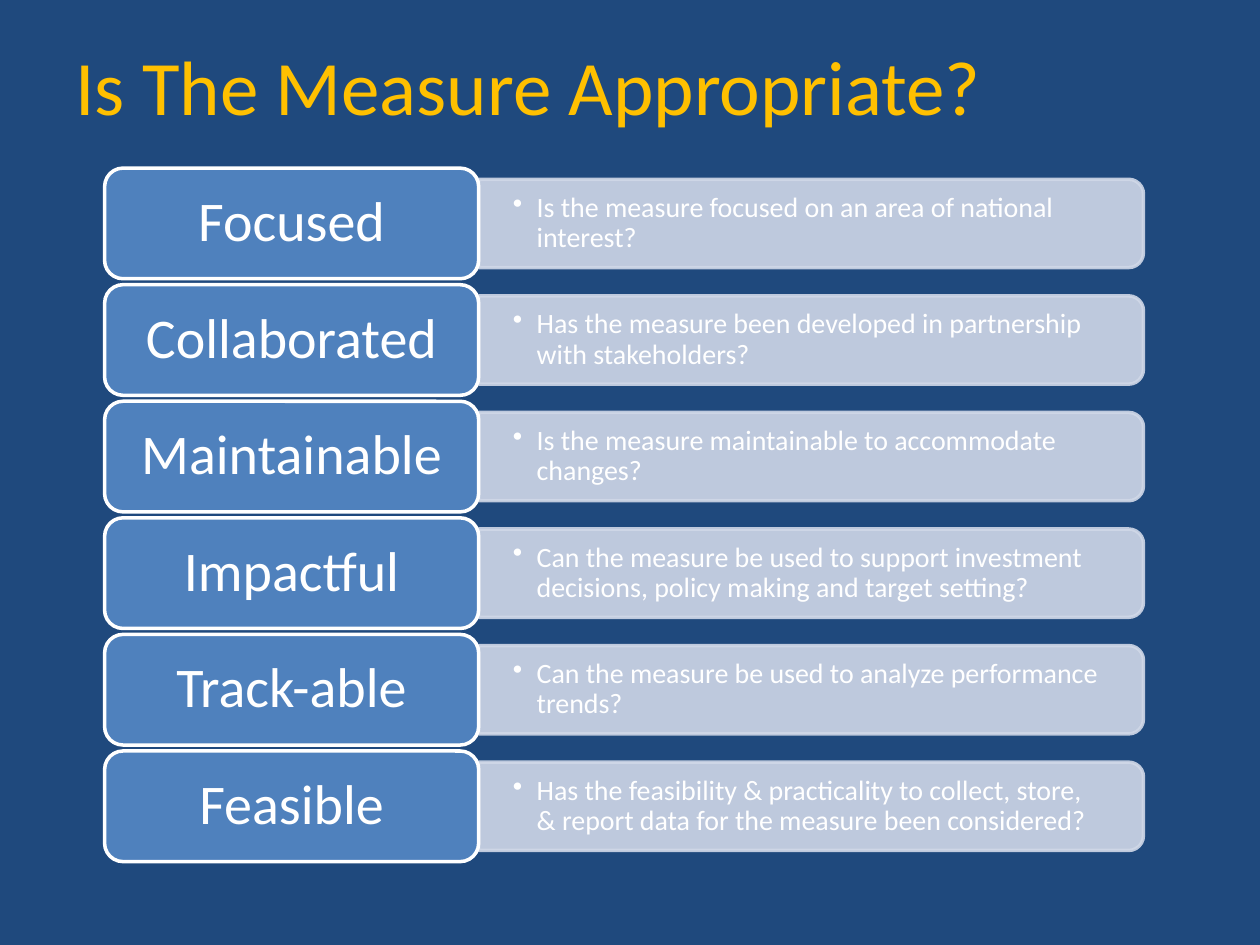
from lxml import etree
from pptx import Presentation
from pptx.dml.color import RGBColor
from pptx.enum.shapes import MSO_SHAPE
from pptx.enum.text import MSO_ANCHOR, PP_ALIGN
from pptx.oxml.ns import qn
from pptx.util import Cm, Pt

ROUNDED = MSO_SHAPE.ROUNDED_RECTANGLE
ROUNDED_TOP = MSO_SHAPE.ROUND_2_SAME_RECTANGLE
LEFT, CENTER = PP_ALIGN.LEFT, PP_ALIGN.CENTER
MIDDLE = MSO_ANCHOR.MIDDLE

COLORS = {
    "background": "1F497D",
    "title": "FFC000",
    "label": "4F81BD",
    "bar": "D0D8E8",
    "white": "FFFFFF",
}
CRITERIA = [
    ("Focused", "Is the measure focused on an area of national interest?"),
    ("Collaborated", "Has the measure been developed in partnership with stakeholders?"),
    ("Maintainable", "Is the measure maintainable to accommodate changes?"),
    ("Impactful", "Can the measure be used to support investment decisions, "
                  "policy making and target setting?"),
    ("Track-able", "Can the measure be used to analyze performance trends?"),
    ("Feasible", "Has the feasibility & practicality to collect, store, "
                 "& report data for the measure been considered?"),
]

# Row grid, in centimetres
FIRST_TOP, ROW_STEP = 3.39, 2.35
LABEL_LEFT, LABEL_WIDTH, LABEL_HEIGHT = 2.11, 7.54, 2.23
BAR_LEFT, BAR_LENGTH, BAR_THICKNESS = LABEL_LEFT + LABEL_WIDTH, 13.4, 1.78
QUESTION_WIDTH, QUESTION_HEIGHT = 13.33, 1.6


def write(shape, text, size, color, align, margin_x, margin_y, spacing=0.9):
    """Put one formatted paragraph in a shape and return the paragraph."""
    frame = shape.text_frame
    frame.text = text
    frame.word_wrap = True
    frame.vertical_anchor = MIDDLE
    frame.margin_left = frame.margin_right = Cm(margin_x)
    frame.margin_top = frame.margin_bottom = Cm(margin_y)
    para = frame.paragraphs[0]
    para.alignment = align
    para.line_spacing = spacing
    font = para.runs[0].font
    font.name = "Calibri"
    font.size = Pt(size)
    font.color.rgb = RGBColor.from_string(COLORS[color])
    return para


def add_panel(kind, left, top, width, height, fill, line):
    panel = page.shapes.add_shape(kind, Cm(left), Cm(top), Cm(width), Cm(height))
    panel.shadow.inherit = False
    panel.fill.solid()
    panel.fill.fore_color.rgb = RGBColor.from_string(COLORS[fill])
    panel.line.color.rgb = RGBColor.from_string(COLORS[line])
    panel.line.width = Pt(2)
    return panel


deck = Presentation()
deck.slide_width, deck.slide_height = Cm(25.4), Cm(19.05)
page = deck.slides.add_slide(deck.slide_layouts[5])
page.background.fill.solid()
page.background.fill.fore_color.rgb = RGBColor.from_string(COLORS["background"])

title = page.shapes.title
title.left, title.top, title.width, title.height = Cm(1.27), Cm(0.43), Cm(22.86), Cm(2.54)
write(title, "Is The Measure Appropriate?", 44, "title", LEFT, 0.25, 0.13, spacing=1.0)

for row, (name, question) in enumerate(CRITERIA):
    label_top = FIRST_TOP + row * ROW_STEP
    middle = label_top + LABEL_HEIGHT / 2

    # The bar stands upright and is turned a quarter, so its round end points right
    bar = add_panel(ROUNDED_TOP, BAR_LEFT + (BAR_LENGTH - BAR_THICKNESS) / 2,
                    middle - BAR_LENGTH / 2, BAR_THICKNESS, BAR_LENGTH, "bar", "bar")
    bar.rotation = 90
    for color in bar._element.spPr.iter(qn("a:srgbClr")):
        etree.SubElement(color, qn("a:alpha"), val="90000")

    question_box = page.shapes.add_textbox(
        Cm(BAR_LEFT), Cm(middle - QUESTION_HEIGHT / 2), Cm(QUESTION_WIDTH), Cm(QUESTION_HEIGHT))
    para = write(question_box, question, 16, "white", LEFT, 0.69, 0.35)
    properties = para._p.get_or_add_pPr()
    properties.set("marL", str(Cm(0.48)))
    properties.set("indent", str(-Cm(0.48)))
    etree.SubElement(properties, qn("a:buChar"), char="•")

    label = add_panel(ROUNDED, LABEL_LEFT, label_top, LABEL_WIDTH, LABEL_HEIGHT, "label", "white")
    write(label, name, 32, "white", CENTER, 0.33, 0.29)

deck.save("out.pptx")
